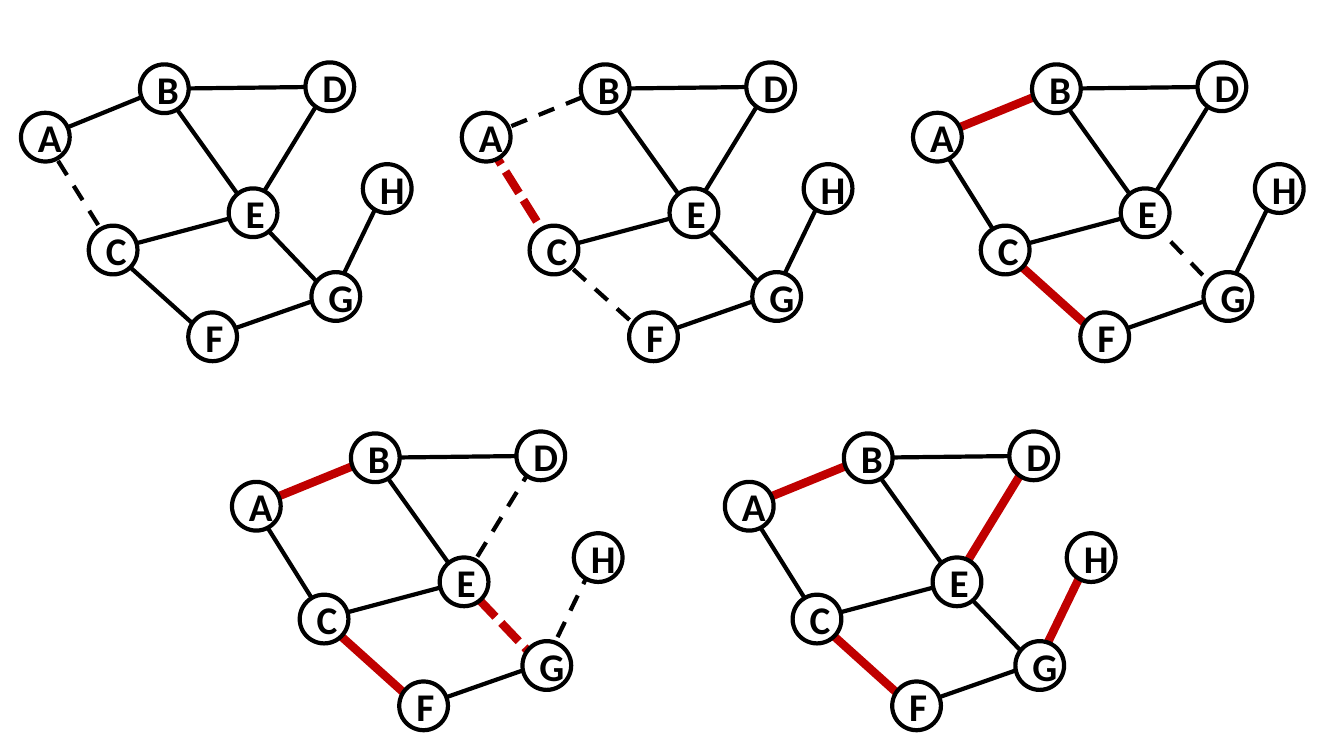
from dataclasses import dataclass

from pptx import Presentation
from pptx.dml.color import RGBColor
from pptx.enum import dml, shapes, text
from pptx.oxml.ns import qn
from pptx.util import Pt


@dataclass(frozen=True)
class Theme:
    ink: RGBColor = RGBColor(0x00, 0x00, 0x00)
    paper: RGBColor = RGBColor(0xFF, 0xFF, 0xFF)
    matched: RGBColor = RGBColor(0xC0, 0x00, 0x00)
    font: str = "Calibri"
    label_size: int = 28
    thin: int = 3
    thick: int = 6


# One graph, measured in points from its top left corner
DIAMETER = 34.8
HUB = (DIAMETER / 2 - 1.5, DIAMETER / 2)  # where edges meet inside a node
NODES = {
    "A": (0, 36), "B": (85, 1.4), "C": (48.4, 116.6), "D": (203.2, 0),
    "E": (148.4, 90), "F": (119.5, 178.6), "G": (207.5, 149.8), "H": (244.2, 72.7),
}
# Each edge with the small shifts of its start (x, y) and end (x, y)
EDGES = {
    "EB": (0, 0, 0, 0), "DB": (0, 0, 0, 0), "GE": (-2, 0, 2, 2),
    "CA": (2, 0, 0, 0), "ED": (0, 0, -0.7, 1.4), "GH": (0, -1.4, 0, 0),
    "GF": (0, -2, 0, 0), "EC": (0, 0, 0, 0), "FC": (0, 2, 0, 0),
    "AB": (0, 0, 0, 0),
}

# Steps of the matching: left, top, matched edges, dashed edges
TOP, BOTTOM = 44.6, 308.2
STEPS = [
    (15, TOP, (), ("CA",)),
    (329.9, TOP, ("CA",), ("CA", "AB", "FC")),
    (652.2, TOP, ("AB", "FC"), ("GE",)),
    (165.7, BOTTOM, ("AB", "FC", "GE"), ("GE", "ED", "GH")),
    (517.8, BOTTOM, ("AB", "FC", "ED", "GH"), ()),
]


class GraphSlide:
    def __init__(self, slide, theme):
        self.s, self.theme = slide, theme

    def edge(self, group, start, end, matched, dashed):
        t = self.theme
        line = group.shapes.add_connector(
            shapes.MSO_CONNECTOR.STRAIGHT, *(Pt(v) for v in (*start, *end)))
        line.line.color.rgb = t.matched if matched else t.ink
        line.line.width = Pt(t.thick if matched else t.thin)
        if dashed:
            dash = dml.MSO_LINE
            line.line.dash_style = dash.SQUARE_DOT if matched else dash.DASH
        props = line._element.spPr
        props.append(props.makeelement(qn("a:effectLst"), {}))

    def node(self, group, label, left, top):
        t = self.theme
        sp = group.shapes.add_shape(
            shapes.MSO_SHAPE.OVAL, Pt(left), Pt(top), Pt(DIAMETER), Pt(DIAMETER))
        sp.shadow.inherit = False
        sp.fill.solid()
        sp.fill.fore_color.rgb = t.paper
        sp.line.color.rgb = t.ink
        sp.line.width = Pt(t.thin)
        tf = sp.text_frame
        tf.word_wrap = True
        tf.vertical_anchor = text.MSO_ANCHOR.MIDDLE
        p = tf.paragraphs[0]
        p.text = label
        p.alignment = text.PP_ALIGN.CENTER
        p.font.name, p.font.size, p.font.bold = t.font, Pt(t.label_size), True
        p.font.color.rgb = t.ink

    def graph(self, left, top, matched, dashed):
        group = self.s.shapes.add_group_shape()

        def hub(name, dx, dy):
            x, y = NODES[name]
            return left + x + HUB[0] + dx, top + y + HUB[1] + dy

        # Edges lie behind the nodes
        for name, (dx1, dy1, dx2, dy2) in EDGES.items():
            self.edge(group, hub(name[0], dx1, dy1), hub(name[1], dx2, dy2),
                      name in matched, name in dashed)
        for label, (x, y) in NODES.items():
            self.node(group, label, left + x, top + y)


def main():
    prs = Presentation()
    prs.slide_width, prs.slide_height = Pt(960), Pt(540)
    slide = GraphSlide(prs.slides.add_slide(prs.slide_layouts[6]), Theme())
    for step in STEPS:
        slide.graph(*step)
    prs.save("out.pptx")


if __name__ == "__main__":
    main()
